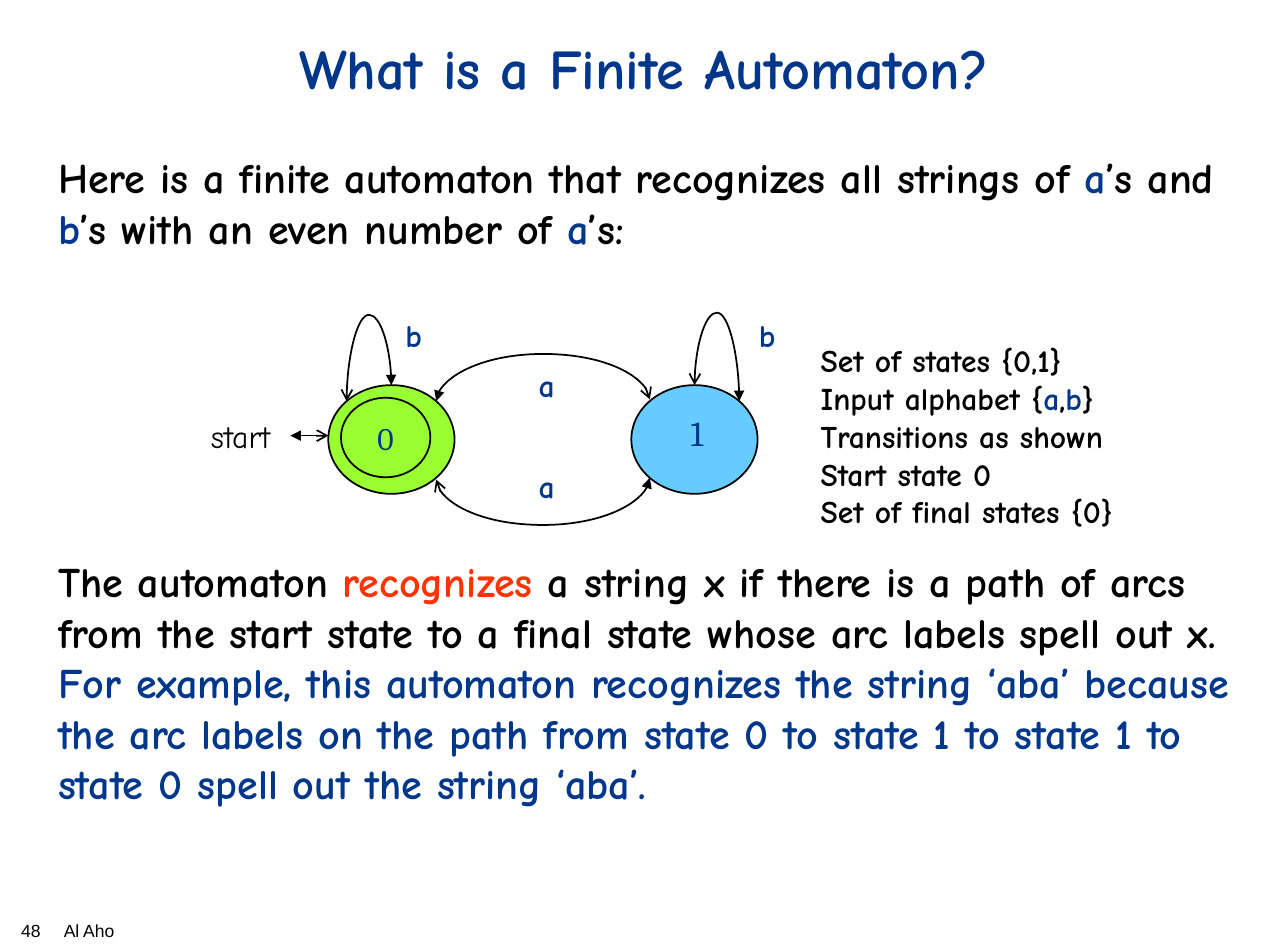
from lxml import etree
from pptx import Presentation
from pptx.dml.color import RGBColor
from pptx.enum.shapes import MSO_CONNECTOR, MSO_SHAPE
from pptx.enum.text import MSO_ANCHOR, PP_ALIGN
from pptx.oxml.ns import qn
from pptx.util import Pt

OVAL = MSO_SHAPE.OVAL
STRAIGHT, CURVE = MSO_CONNECTOR.STRAIGHT, MSO_CONNECTOR.CURVE
LEFT, CENTER = PP_ALIGN.LEFT, PP_ALIGN.CENTER
MIDDLE = MSO_ANCHOR.MIDDLE
COLORS = {"navy": "00378A", "black": "000000", "red": "FF3300",
          "green": "99FF33", "sky": "66CCFF"}
COMIC = "Comic Neue"

deck = Presentation()
deck.slide_width, deck.slide_height = Pt(734.4), Pt(540)
page = deck.slides.add_slide(deck.slide_layouts[6])


def write(box, paras, size, font=COMIC, bold=True, align=LEFT, wrap=False):
    """Fill a shape with paragraphs, each a list of (text, color name) spans."""
    frame = box.text_frame
    frame.word_wrap = wrap
    for index, spans in enumerate(paras):
        para = frame.paragraphs[0] if index == 0 else frame.add_paragraph()
        para.alignment = align
        for text, color in spans:
            span = para.add_run()
            span.text = text
            span.font.name, span.font.size, span.font.bold = font, Pt(size), bold
            span.font.color.rgb = RGBColor.from_string(COLORS[color])
    return frame


def add_arrow(kind, x1, y1, x2, y2):
    arrow = page.shapes.add_connector(kind, Pt(x1), Pt(y1), Pt(x2), Pt(y2))
    arrow.line.width = Pt(1)
    arrow.line.color.rgb = RGBColor.from_string(COLORS["black"])
    properties = arrow.element.spPr
    outline = properties.find(qn("a:ln"))
    etree.SubElement(outline, qn("a:headEnd"), type="triangle")
    etree.SubElement(outline, qn("a:tailEnd"), type="arrow")
    etree.SubElement(properties, qn("a:effectLst"))
    return arrow


# Footer, with a tab stop between page number and author
footer = page.shapes.add_textbox(Pt(5), Pt(522), Pt(157), Pt(18))
footer_para = write(footer, [[("48\tAl Aho", "black")]], 10, "Arial", False,
                    wrap=True).paragraphs[0]
footer_para.line_spacing = Pt(11)
tabs = etree.SubElement(footer_para._p.get_or_add_pPr(), qn("a:tabLst"))
etree.SubElement(tabs, qn("a:tab"), pos=str(Pt(24.3)), algn="l")

# Title
title = page.shapes.add_textbox(Pt(21.6), Pt(-3.6), Pt(691.2), Pt(90))
title_frame = write(title, [[("What is a Finite Automaton?", "navy")]], 32,
                    align=CENTER, wrap=True)
title_frame.vertical_anchor = MIDDLE
title_frame.paragraphs[0].line_spacing = 0.85

# Text above and below the diagram
intro = [[("Here is a finite automaton that recognizes all strings of ", "black"),
          ("a", "navy"), ("’s and ", "black"), ("b", "navy"),
          ("’s with an even number of ", "black"), ("a", "navy"), ("’s:", "black")]]
meaning = [
    [("The automaton ", "black"), ("recognizes", "red"),
     (" a string x if there is a path of arcs from the start state to a final "
      "state whose arc labels spell out x.", "black")],
    [("For example, this automaton recognizes the string ‘aba’ because the arc "
      "labels on the path from state 0 to state 1 to state 1 to state 0 spell "
      "out the string ‘aba’.", "navy")],
]
for top, height, paras in [(82.8, 65, intro), (313.2, 152, meaning)]:
    box = page.shapes.add_textbox(Pt(26), Pt(top), Pt(686.8), Pt(height))
    write(box, paras, 24, wrap=True)

# States; the inner ring marks state 0 as final
states = []
for left, top, width, height, color in [(187.2, 219.6, 72, 62, "green"),
                                        (360, 219.6, 72, 62, "sky"),
                                        (194.4, 226.8, 51, 45.4, "green")]:
    state = page.shapes.add_shape(OVAL, Pt(left), Pt(top), Pt(width), Pt(height))
    state.shadow.inherit = False
    state.fill.solid()
    state.fill.fore_color.rgb = RGBColor.from_string(COLORS[color])
    state.line.color.rgb = RGBColor.from_string(COLORS["black"])
    state.line.width = Pt(1)
    states.append(state)
zero, one, final_ring = states
write(final_ring, [[("0", "navy")]], 18, "Cambria", False, CENTER)
final_ring.text_frame.vertical_anchor = MIDDLE

# Curved arcs: from state and site, to state and site, ends, turn, bend ratio
arcs = [
    (zero, 7, one, 1, (248.7, 228.7), (370.5, 227.7), 1, 27.06),
    (one, 3, zero, 5, (370.5, 272.5), (248.7, 273.5), 1, 27.06),
    (zero, 0, zero, 1, (223.2, 219.6), (197.7, 228.7), -1, -4.41),
    (one, 7, one, 0, (421.5, 228.7), (396, 219.6), -1, 5.54),
]
for source, source_site, target, target_site, (x1, y1), (x2, y2), turn, bend in arcs:
    middle_x, middle_y = (x1 + x2) / 2, (y1 + y2) / 2
    half_x, half_y = turn * (y2 - y1) / 2, -turn * (x2 - x1) / 2
    arc = add_arrow(CURVE, middle_x - half_x, middle_y - half_y,
                    middle_x + half_x, middle_y + half_y)
    properties = arc.element.spPr
    properties.find(qn("a:xfrm")).set("rot", str(turn * 90 % 360 * 60000))
    guides = properties.find(qn("a:prstGeom")).get_or_add_avLst()
    etree.SubElement(guides, qn("a:gd"), name="adj1", fmla=f"val {round(bend * 100000)}")
    joints = arc.element.find(".//" + qn("p:cNvCxnSpPr"))
    for tag, state, site in [("a:stCxn", source, source_site),
                             ("a:endCxn", target, target_site)]:
        etree.SubElement(joints, qn(tag), id=str(state.shape_id), idx=str(site))

add_arrow(STRAIGHT, 165.6, 248.4, 187.2, 248.4)

# Labels
for text, left, top, width, size, font, bold, color in [
    ("1", 384.5, 231.1, 25.9, 20, "Cambria", False, "navy"),
    ("a", 299.5, 205.2, 24.5, 18, COMIC, True, "navy"),
    ("a", 299.5, 262.8, 24.5, 18, COMIC, True, "navy"),
    ("b", 223.2, 176.4, 25.2, 18, COMIC, True, "navy"),
    ("b", 424.8, 176.4, 25.2, 18, COMIC, True, "navy"),
    ("start", 108, 234, 58.3, 18, COMIC, False, "black"),
]:
    label = page.shapes.add_textbox(Pt(left), Pt(top), Pt(width), Pt(28.8))
    write(label, [[(text, color)]], size, font, bold, CENTER)

definition = page.shapes.add_textbox(Pt(460.8), Pt(190.8), Pt(215.3), Pt(116.6))
write(definition, [
    [("Set of states {0,1}", "black")],
    [("Input alphabet {", "black"), ("a", "navy"), (",", "black"),
     ("b", "navy"), ("}", "black")],
    [("Transitions as shown", "black")],
    [("Start state 0", "black")],
    [("Set of final states {0}", "black")],
], 18)

deck.save("out.pptx")
